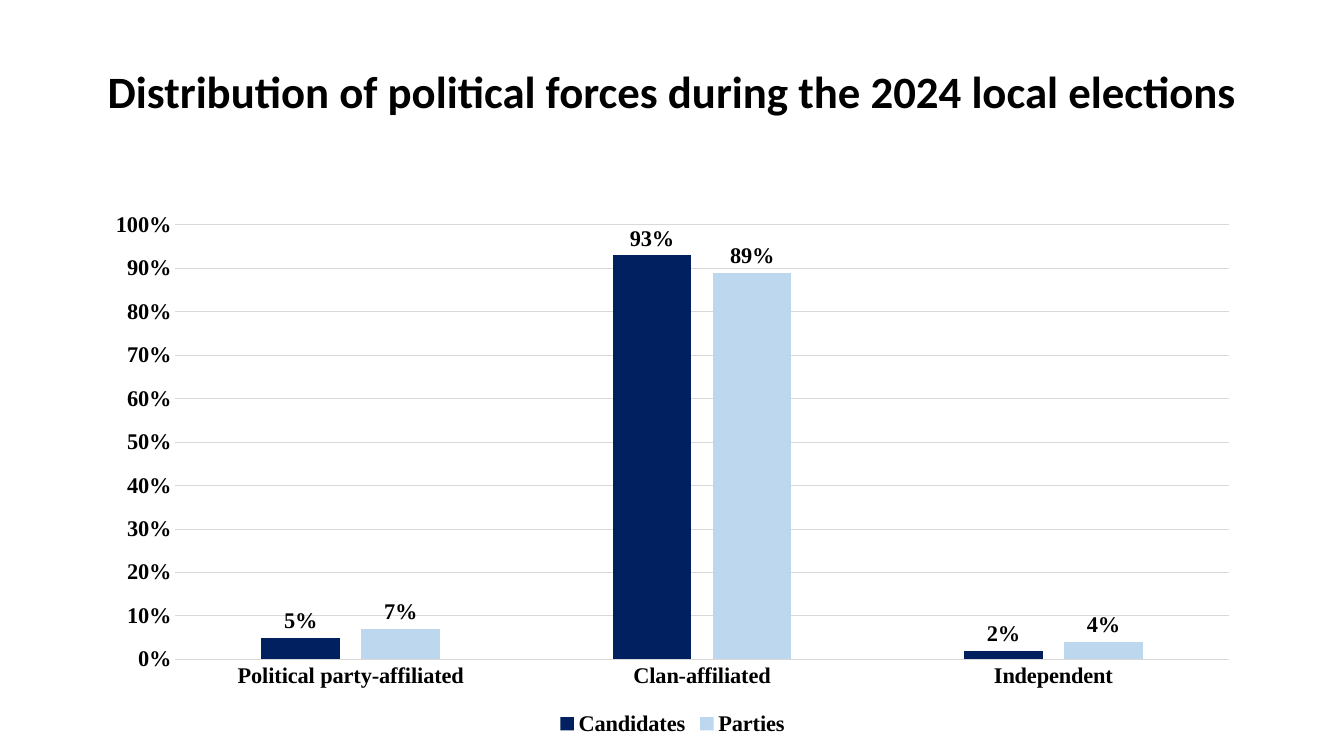
from pptx import Presentation
from pptx.chart.data import CategoryChartData
from pptx.dml.color import RGBColor
from pptx.enum.chart import XL_CHART_TYPE, XL_LABEL_POSITION, XL_LEGEND_POSITION, XL_TICK_MARK
from pptx.enum.text import MSO_ANCHOR, PP_ALIGN
from pptx.util import Inches, Pt

# Content
TITLE = "Distribution of political forces during the 2024 local elections"
CATEGORIES = ["Political party-affiliated", "Clan-affiliated", "Independent"]
SERIES = {
    "Candidates": (0.05, 0.93, 0.02),
    "Parties": (0.07, 0.89, 0.04),
}

# Theme and layout
THEME = {
    "title_font": "Calibri", "title_size": 32,
    "chart_font": "Times New Roman", "chart_size": 16,
    "text": "000000", "grid": "D9D9D9", "grid_width": 0.75,
    "bars": ("002060", "BDD7EE"),
}
LEFT, WIDTH = 0.92, 11.5
TITLE_TOP, TITLE_HEIGHT = 0.31, 1.24
CHART_TOP, CHART_HEIGHT = 2, 5.35


def style_font(font, name, size):
    font.name = name
    font.size = Pt(size)
    font.bold = True
    font.color.rgb = RGBColor.from_string(THEME["text"])


def add_text(slide, text, *, box, font, size, align):
    shape = slide.shapes.add_textbox(*map(Inches, box))
    frame = shape.text_frame
    frame.word_wrap = True
    frame.vertical_anchor = MSO_ANCHOR.MIDDLE
    paragraph = frame.paragraphs[0]
    paragraph.alignment = align
    paragraph.line_spacing = 0.9
    run = paragraph.add_run()
    run.text = text
    style_font(run.font, font, size)


def style_line(line):
    line.color.rgb = RGBColor.from_string(THEME["grid"])
    line.width = Pt(THEME["grid_width"])


def add_column_chart(slide):
    data = CategoryChartData(number_format="0%")
    data.categories = CATEGORIES
    for name, values in SERIES.items():
        data.add_series(name, values)
    box = map(Inches, (LEFT, CHART_TOP, WIDTH, CHART_HEIGHT))
    chart = slide.shapes.add_chart(XL_CHART_TYPE.COLUMN_CLUSTERED, *box, data).chart
    chart.has_title = False
    chart_type = THEME["chart_font"], THEME["chart_size"]
    style_font(chart.font, *chart_type)

    # Legend
    chart.has_legend = True
    chart.legend.position = XL_LEGEND_POSITION.BOTTOM
    chart.legend.include_in_layout = False
    style_font(chart.legend.font, *chart_type)

    # Axes
    for axis in (chart.category_axis, chart.value_axis):
        axis.major_tick_mark = axis.minor_tick_mark = XL_TICK_MARK.NONE
        style_font(axis.tick_labels.font, *chart_type)
    style_line(chart.category_axis.format.line)
    value_axis = chart.value_axis
    value_axis.minimum_scale, value_axis.maximum_scale = 0, 1
    value_axis.major_unit = 0.1
    value_axis.tick_labels.number_format = "0%"
    value_axis.tick_labels.number_format_is_linked = False
    value_axis.format.line.fill.background()
    style_line(value_axis.major_gridlines.format.line)

    # Columns and their labels
    plot = chart.plots[0]
    plot.gap_width, plot.overlap = 219, -27
    plot.vary_by_categories = False
    for series, color in zip(plot.series, THEME["bars"]):
        series.format.fill.solid()
        series.format.fill.fore_color.rgb = RGBColor.from_string(color)
        series.invert_if_negative = False
        labels = series.data_labels
        labels.show_value = True
        labels.position = XL_LABEL_POSITION.OUTSIDE_END
        labels.number_format = "0%"
        labels.number_format_is_linked = False
        style_font(labels.font, *chart_type)


def main():
    presentation = Presentation()
    presentation.slide_width, presentation.slide_height = Inches(13.33), Inches(7.5)
    slide = presentation.slides.add_slide(presentation.slide_layouts[6])
    add_text(slide, TITLE, box=(LEFT, TITLE_TOP, WIDTH, TITLE_HEIGHT),
             font=THEME["title_font"], size=THEME["title_size"], align=PP_ALIGN.CENTER)
    add_column_chart(slide)
    presentation.save("out.pptx")


if __name__ == "__main__":
    main()
